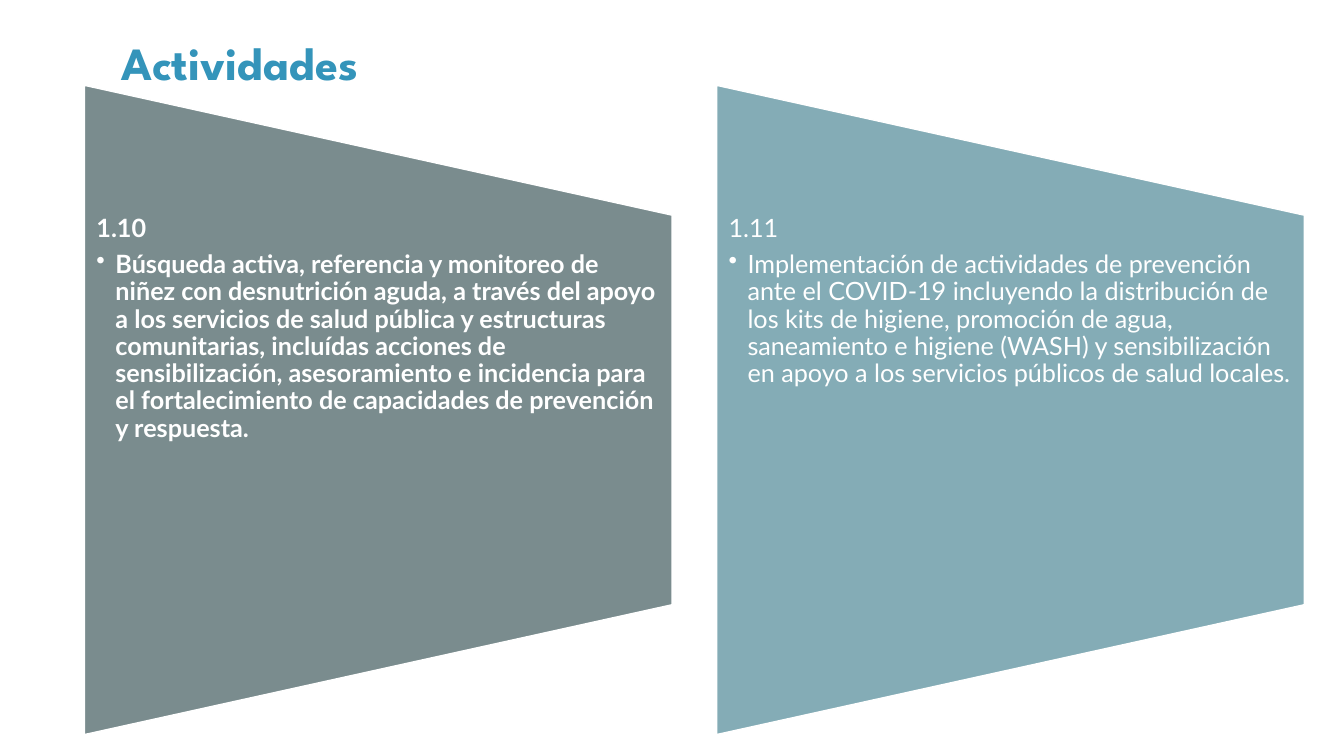
from lxml import etree
from pptx import Presentation
from pptx.dml.color import RGBColor
from pptx.enum.shapes import MSO_SHAPE as Preset
from pptx.enum.text import MSO_ANCHOR as Anchor, MSO_AUTO_SIZE as AutoSize, PP_ALIGN as Align
from pptx.oxml.ns import qn
from pptx.util import Cm, Pt

BLUE = RGBColor(0x34, 0x94, 0xBA)
GRAY = RGBColor(0x7A, 0x8C, 0x8E)
TEAL = RGBColor(0x84, 0xAC, 0xB6)
WHITE = RGBColor(0xFF, 0xFF, 0xFF)

PANEL_LEFT, PANEL_TOP = 2.13, 2.15
PANEL_WIDTH, PANEL_HEIGHT = 14.81, 16.36
PANEL_PITCH = 15.93
TEXT_TOP, TEXT_HEIGHT = 5.44, 9.8

ACTIVITIES = [
    ("1.10", "Búsqueda activa, referencia y monitoreo de niñez con desnutrición aguda, "
     "a través del apoyo a los servicios de salud pública y estructuras comunitarias, "
     "incluídas acciones de sensibilización, asesoramiento e incidencia para el "
     "fortalecimiento de capacidades de prevención y respuesta.", GRAY, True),
    ("1.11", "Implementación de actividades de prevención ante el COVID-19 incluyendo "
     "la distribución de los kits de higiene, promoción de agua, saneamiento e higiene "
     "(WASH) y sensibilización en apoyo a los servicios públicos de salud locales.",
     TEAL, False),
]


def write(para, text, font="Lato", size=18, color=WHITE, bold=False,
          align=Align.LEFT, line_spacing=None, space_after=0):
    para.alignment = align
    para.line_spacing = line_spacing
    para.space_after = Pt(space_after)
    span = para.add_run()
    span.text = text
    span.font.name = font
    span.font.size = Pt(size)
    span.font.bold = bold
    span.font.color.rgb = color


def add_bullet(para, indent):
    """Give the paragraph a round bullet with a hanging indent."""
    properties = para._p.get_or_add_pPr()
    properties.set("marL", str(indent))
    properties.set("indent", str(-indent))
    etree.SubElement(properties, qn("a:buChar")).set("char", "•")


def set_title(page, text):
    title = page.shapes.title
    title.left, title.top, title.width, title.height = Cm(1.83), Cm(0.53), Cm(8.43), Cm(2.06)
    frame = title.text_frame
    frame.auto_size = AutoSize.NONE
    frame.vertical_anchor = Anchor.MIDDLE
    write(frame.paragraphs[0], text, font="League Spartan", size=33, color=BLUE,
          bold=True, align=Align.CENTER)


def add_panel(page, left, color):
    """Add a trapezoid turned so that its wide side faces left."""
    shift = (PANEL_HEIGHT - PANEL_WIDTH) / 2
    panel = page.shapes.add_shape(
        Preset.FLOWCHART_MANUAL_OPERATION, Cm(left - shift), Cm(PANEL_TOP + shift),
        Cm(PANEL_HEIGHT), Cm(PANEL_WIDTH))
    panel.rotation = 270
    panel.shadow.inherit = False
    panel.fill.solid()
    panel.fill.fore_color.rgb = color
    panel.line.color.rgb = WHITE
    panel.line.width = Pt(1)


def add_activity_text(page, left, number, description, bold):
    box = page.shapes.add_textbox(Cm(left), Cm(TEXT_TOP), Cm(PANEL_WIDTH), Cm(TEXT_HEIGHT))
    frame = box.text_frame
    frame.word_wrap = True
    frame.margin_left = frame.margin_right = Cm(0.3)
    frame.margin_top = frame.margin_bottom = 0
    write(frame.paragraphs[0], number, bold=bold, line_spacing=0.9, space_after=6.3)
    para = frame.add_paragraph()
    para.level = 1
    write(para, description, bold=bold, line_spacing=0.9, space_after=2.7)
    add_bullet(para, Cm(0.48))


def main():
    deck = Presentation()
    deck.slide_width, deck.slide_height = Cm(33.87), Cm(19.05)
    page = deck.slides.add_slide(deck.slide_layouts.get_by_name("Title Only"))
    set_title(page, "Actividades")
    for index, (number, description, color, bold) in enumerate(ACTIVITIES):
        left = PANEL_LEFT + index * PANEL_PITCH
        add_panel(page, left, color)
        add_activity_text(page, left, number, description, bold)
    deck.save("out.pptx")


if __name__ == "__main__":
    main()
